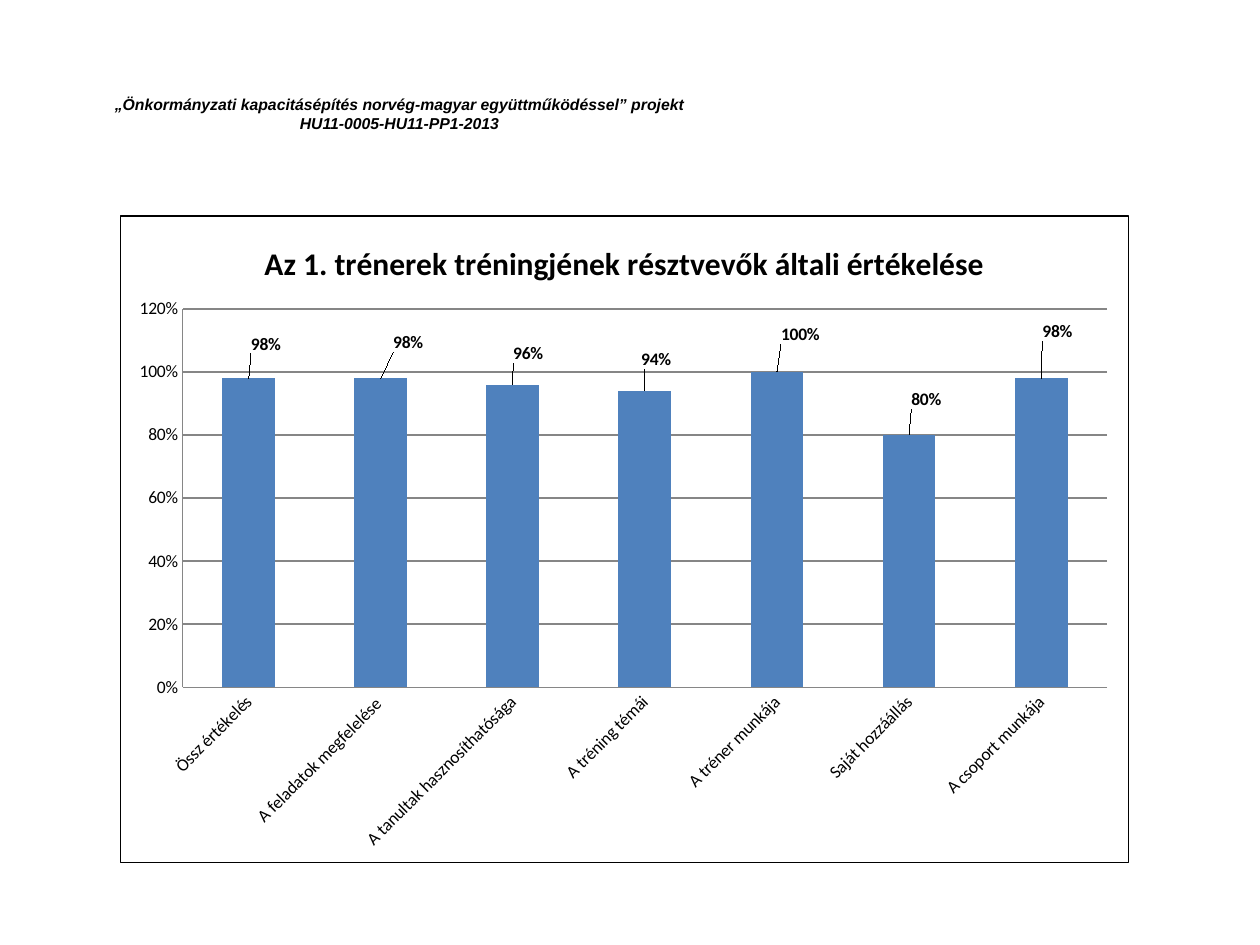
from lxml import etree
from pptx import Presentation, util as u
from pptx.chart.data import CategoryChartData
from pptx.dml.color import RGBColor
from pptx.enum import chart as ch, text
from pptx.oxml import parse_xml
from pptx.oxml.ns import nsdecls, qn

THEME = {
    "head": "Arial", "body": "Calibri",
    "ink": RGBColor(0, 0, 0), "bar": RGBColor(0x4F, 0x81, 0xBD),
    "grid": RGBColor(0x86, 0x86, 0x86),
    "small": u.Pt(9), "base": u.Pt(10), "title": u.Pt(18),
}
HEAD = ("„Önkormányzati kapacitásépítés norvég‐magyar együttműködéssel” projekt\v"
        "HU11-0005-HU11-PP1-2013")
TITLE = "Az 1. trénerek tréningjének résztvevők általi értékelése"
# category, value, label shift right and down as shares of the chart
SCORES = [
    ("Össz értékelés", 0.98, 0.017, -0.03),
    ("A feladatok megfelelése ", 0.98, 0.027, -0.033),
    ("A tanultak hasznosíthatósága", 0.96, 0.015, -0.025),
    ("A tréning témái", 0.94, 0.011, -0.025),
    ("A tréner munkája", 1, 0.023, -0.035),
    ("Saját hozzáállás", 0.8, 0.017, -0.032),
    ("A csoport munkája", 0.98, 0.016, -0.05),
]
PLOT = {"x": 0.062, "y": 0.144, "w": 0.917, "h": 0.585}


def style(font, size, bold=False, name=THEME["body"]):
    font.name, font.size, font.bold = name, size, bold
    font.color.rgb = THEME["ink"]


def layout(spots, inner=False):
    """Return a manual chart layout with the given x, y, w, h shares."""
    root = etree.Element(qn("c:layout"))
    man = etree.SubElement(root, qn("c:manualLayout"))
    marks = {"layoutTarget": "inner", "xMode": "edge", "yMode": "edge"} if inner else {}
    for key, val in {**marks, **spots}.items():
        etree.SubElement(man, qn("c:" + key)).set("val", str(val))
    return root


def add_head(slide):
    box = slide.shapes.add_textbox(u.Cm(0.76), u.Cm(1.73), u.Cm(14.58), u.Cm(1.12))
    frame = box.text_frame
    frame.word_wrap = True
    frame.vertical_anchor = text.MSO_ANCHOR.MIDDLE
    frame.margin_top = frame.margin_bottom = 0
    para = frame.paragraphs[0]
    para.text = HEAD
    para.alignment = text.PP_ALIGN.CENTER
    style(para.font, THEME["small"], True, THEME["head"])
    para.font.italic = True


def add_scores(slide):
    data = CategoryChartData(number_format="0%")
    data.categories = [row[0] for row in SCORES]
    data.add_series("Series 1", [row[1] for row in SCORES])
    chart = slide.shapes.add_chart(
        ch.XL_CHART_TYPE.COLUMN_CLUSTERED,
        u.Cm(2.41), u.Cm(4.34), u.Cm(20.35), u.Cm(13.06), data).chart
    style(chart.font, THEME["base"])
    chart.has_legend = False
    chart.has_title = True
    chart.chart_title.include_in_layout = False
    para = chart.chart_title.text_frame.paragraphs[0]
    para.text = TITLE
    style(para.font, THEME["title"], True)
    set_axes(chart)
    set_bars(chart.plots[0])
    set_frame(chart)


def set_axes(chart):
    for axis in (chart.category_axis, chart.value_axis):
        axis.major_tick_mark = axis.minor_tick_mark = ch.XL_TICK_MARK.NONE
        axis.format.line.color.rgb = THEME["grid"]
        style(axis.tick_labels.font, THEME["base"])
    body = chart.category_axis.tick_labels.font._element.getparent().getparent()
    body.getparent().find(qn("a:bodyPr")).set("rot", "-2700000")
    axis = chart.value_axis
    axis.minimum_scale, axis.maximum_scale, axis.major_unit = 0, 1.2, 0.2
    axis.tick_labels.number_format = "0%"
    axis.tick_labels.number_format_is_linked = False
    axis.has_major_gridlines = True
    axis.major_gridlines.format.line.color.rgb = THEME["grid"]


def set_bars(plot):
    plot.gap_width = 150
    plot.vary_by_categories = False
    bars = plot.series[0]
    bars.format.fill.solid()
    bars.format.fill.fore_color.rgb = THEME["bar"]
    tags = bars.data_labels
    tags.show_value = True
    tags.number_format, tags.number_format_is_linked = "0%", False
    style(tags.font, THEME["base"], True)
    for i, (_, _, dx, dy) in enumerate(SCORES):
        tag = bars.points[i].data_label
        style(tag.font, THEME["base"], True)
        tag.position = ch.XL_LABEL_POSITION.OUTSIDE_END
    for node, (_, _, dx, dy) in zip(tags._element.findall(qn("c:dLbl")), SCORES):
        node.find(qn("c:idx")).addnext(layout({"x": dx, "y": dy}))


def set_frame(chart):
    """Place the plot by hand and draw the border of the whole chart."""
    space = chart._chartSpace
    area = space.chart.plotArea
    for old in area.findall(qn("c:layout")):
        area.remove(old)
    area.insert(0, layout(PLOT, inner=True))
    space.chart.addnext(parse_xml(
        f'<c:spPr {nsdecls("c", "a")}><a:solidFill><a:srgbClr val="FFFFFF"/></a:solidFill>'
        f'<a:ln w="{u.Pt(0.75)}"><a:solidFill><a:srgbClr val="{THEME["ink"]}"/>'
        '</a:solidFill></a:ln></c:spPr>'))


def main():
    deck = Presentation()
    deck.slide_width, deck.slide_height = u.Cm(25.4), u.Cm(19.05)
    slide = deck.slides.add_slide(deck.slide_layouts[6])
    add_head(slide)
    add_scores(slide)
    deck.save("out.pptx")


if __name__ == "__main__":
    main()
